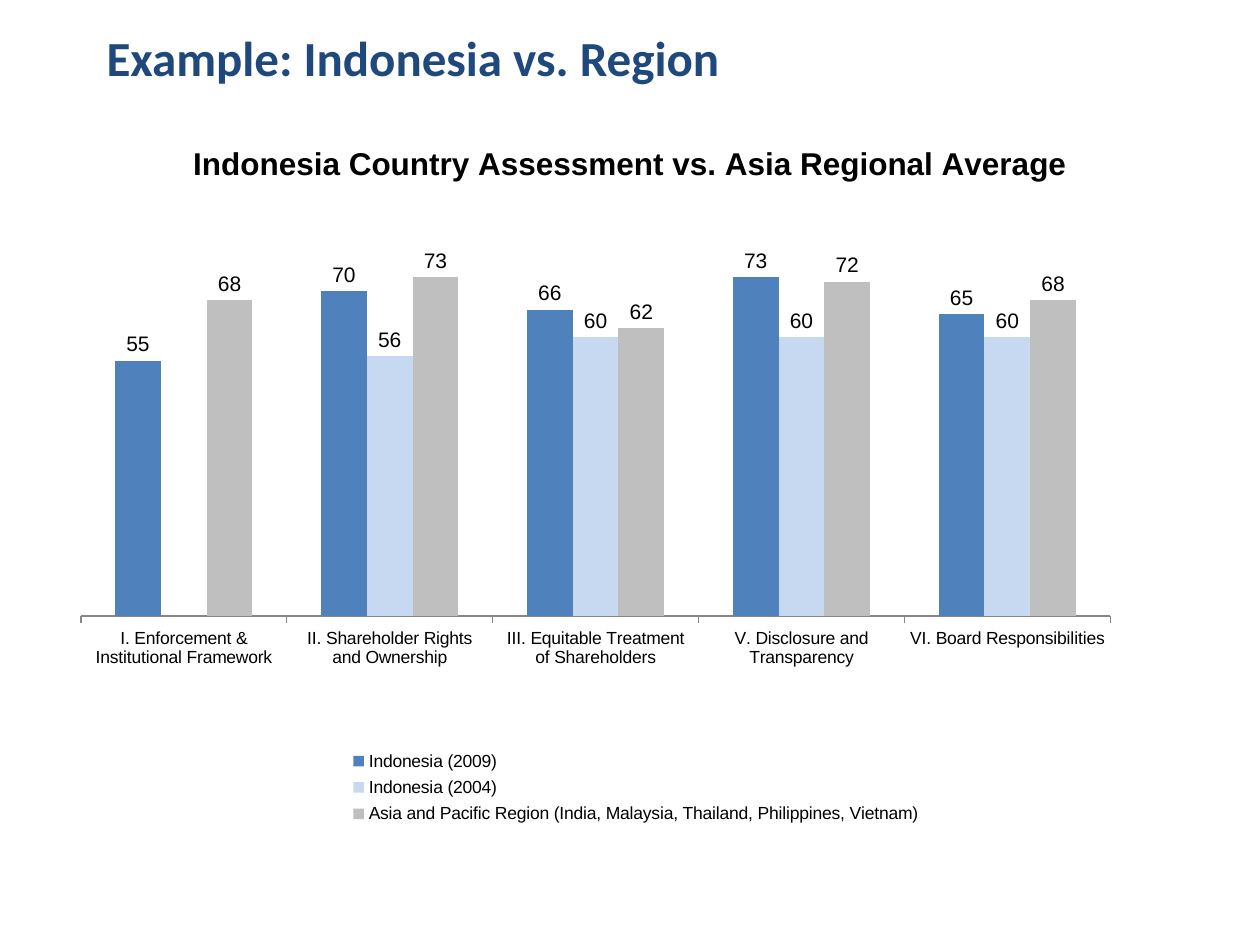
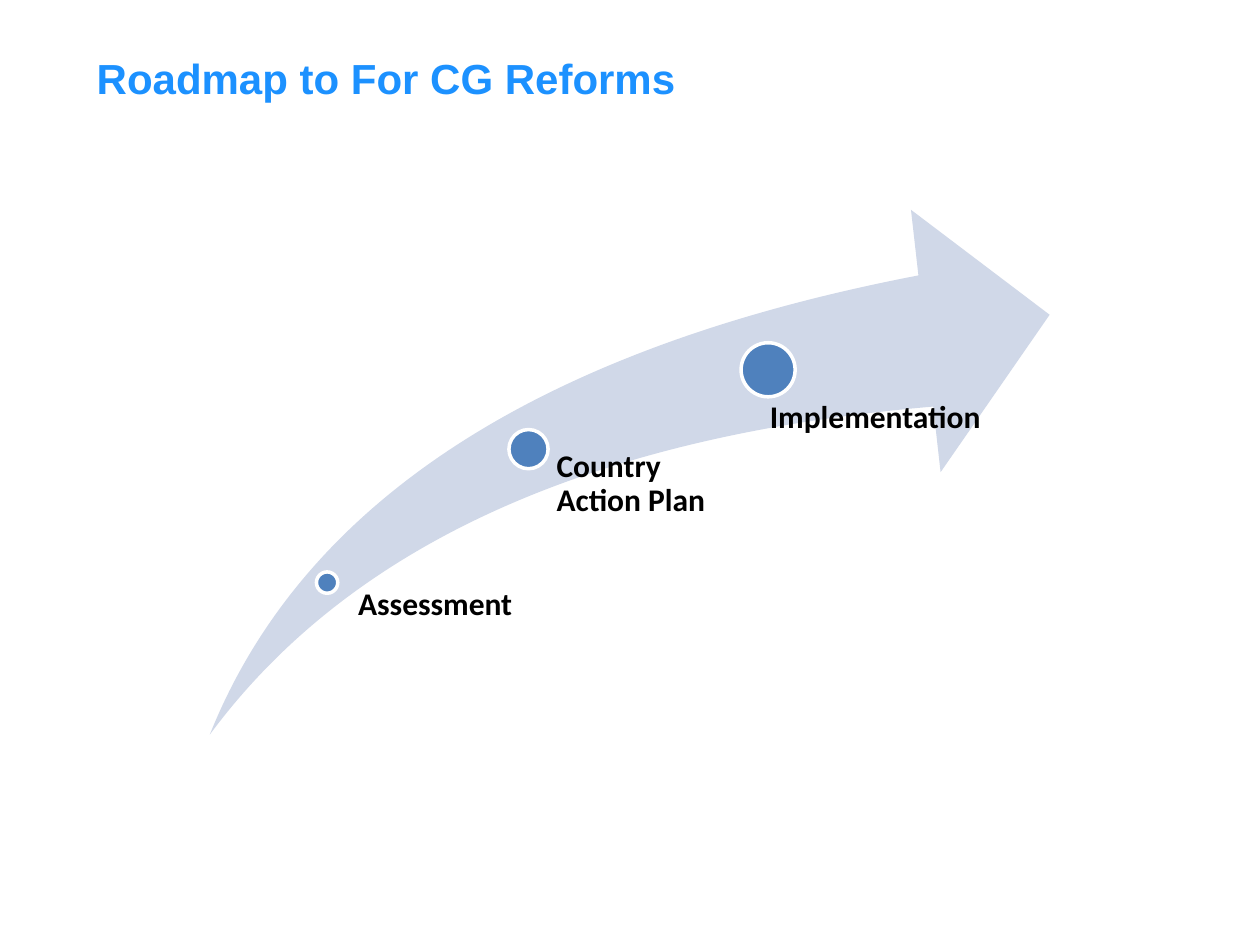
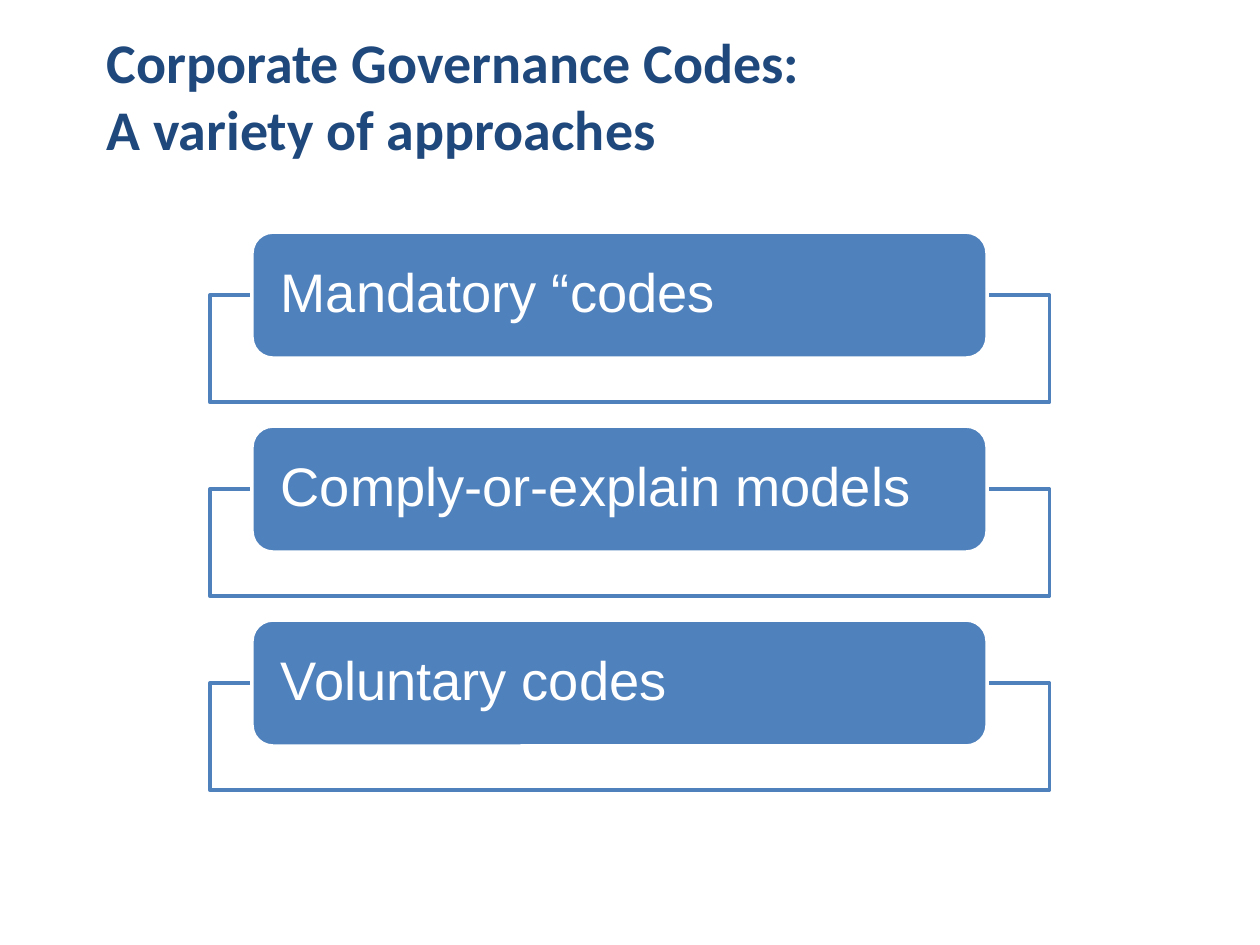
from lxml.etree import SubElement
from pptx import Presentation
from pptx.chart.data import CategoryChartData
from pptx.dml.color import RGBColor
from pptx.enum.chart import XL_CHART_TYPE, XL_LABEL_POSITION, XL_LEGEND_POSITION, XL_TICK_MARK
from pptx.enum.shapes import MSO_SHAPE
from pptx.enum.text import MSO_ANCHOR, PP_ALIGN
from pptx.oxml.ns import qn
from pptx.util import Cm, Pt

NAVY, SKY, BLUE = "1F497D", "1C91FF", "4F81BD"
PALE, SILVER, MIST = "C6D9F1", "BFBFBF", "D0D8E8"
WHITE, BLACK, GRAY = "FFFFFF", "000000", "868686"
TITLE = (1.9, 0.43, 21.6, 2.97)


def color(code):
    return RGBColor.from_string(code)


def put(slide, box, text="", size=18, font="Calibri", ink=BLACK, bold=True,
        kind=None, fill=None, line=None, inset=(0.25, 0.13), anchor=MSO_ANCHOR.TOP,
        space=1.0):
    """Add a text box, or a preset shape when kind is given."""
    spot = [Cm(v) for v in box]
    if kind is None:
        shape = slide.shapes.add_textbox(*spot)
    else:
        shape = slide.shapes.add_shape(kind, *spot)
        shape.shadow.inherit = False
        shape.fill.solid()
        shape.fill.fore_color.rgb = color(fill)
        if line:
            shape.line.color.rgb = color(line)
            shape.line.width = Pt(2)
        else:
            shape.line.fill.background()
    if text:
        frame = shape.text_frame
        frame.word_wrap = True
        frame.vertical_anchor = anchor
        frame.margin_left = frame.margin_right = Cm(inset[0])
        frame.margin_top = frame.margin_bottom = Cm(inset[1])
        para = frame.paragraphs[0]
        para.text = text
        para.alignment = PP_ALIGN.LEFT
        para.line_spacing = space
        para.font.size, para.font.name, para.font.bold = Pt(size), font, bold
        para.font.color.rgb = color(ink)
    return shape


deck = Presentation()
deck.slide_width, deck.slide_height = Cm(25.4), Cm(19.05)
blank = deck.slide_layouts[6]

# Slide 1: country scores against the region
slide = deck.slides.add_slide(blank)
put(slide, TITLE, "Example: Indonesia vs. Region", 28, ink=NAVY)

data = CategoryChartData()
data.categories = [
    "I. Enforcement & Institutional Framework",
    "II. Shareholder Rights and Ownership",
    "III. Equitable Treatment of Shareholders",
    "V. Disclosure and Transparency",
    "VI. Board Responsibilities",
]
scores = [
    ("Indonesia (2009)", (55, 70, 66, 73, 65), BLUE),
    ("Indonesia (2004)", (None, 56, 60, 60, 60), PALE),
    ("Asia and Pacific Region (India, Malaysia, Thailand, Philippines, Vietnam)",
     (68, 73, 62, 72, 68), SILVER),
]
for name, vals, tint in scores:
    data.add_series(name, vals)
chart = slide.shapes.add_chart(XL_CHART_TYPE.COLUMN_CLUSTERED, Cm(1.17), Cm(2.34),
                               Cm(23.06), Cm(14.4), data).chart
chart.font.size, chart.font.name = Pt(10), "Arial"
chart.font.color.rgb = color(BLACK)

# Chart title
chart.has_title = True
head = chart.chart_title.text_frame.paragraphs[0]
head.text = "Indonesia Country Assessment vs. Asia Regional Average"
head.font.size, head.font.name, head.font.bold = Pt(18), "Arial", True
head.font.color.rgb = color(BLACK)

# Axes
axis = chart.value_axis
axis.minimum_scale, axis.maximum_scale = 0, 80
axis.has_major_gridlines = False
axis.visible = False
chart.category_axis.major_tick_mark = XL_TICK_MARK.OUTSIDE
chart.category_axis.format.line.color.rgb = color(GRAY)

# Columns and their labels
plot = chart.plots[0]
plot.gap_width, plot.overlap, plot.vary_by_categories = 150, 0, False
for series, (name, vals, tint) in zip(plot.series, scores):
    series.format.fill.solid()
    series.format.fill.fore_color.rgb = color(tint)
    labels = series.data_labels
    labels.show_value = True
    labels.position = XL_LABEL_POSITION.OUTSIDE_END
    labels.number_format, labels.number_format_is_linked = "0", False
    labels.font.size, labels.font.name = Pt(12), "Arial"
    labels.font.color.rgb = color(BLACK)

# Legend and fixed places for the plot and the legend
chart.has_legend = True
chart.legend.position = XL_LEGEND_POSITION.BOTTOM
chart.legend.include_in_layout = False
area = chart._chartSpace.chart.plotArea
for old in area.findall(qn("c:layout")):
    area.remove(old)
legend = chart.legend._element
for part, slot, place in ((area, 0, (0.02, 0.18, 0.9, 0.52)),
                          (legend, 1, (0.25, 0.88, 0.51, 0.13))):
    layout = part.makeelement(qn("c:layout"))
    part.insert(slot, layout)
    manual = SubElement(layout, qn("c:manualLayout"))
    if part is area:
        SubElement(manual, qn("c:layoutTarget")).set("val", "inner")
    for key in ("xMode", "yMode"):
        SubElement(manual, qn("c:" + key)).set("val", "edge")
    for key, val in zip("xywh", place):
        SubElement(manual, qn("c:" + key)).set("val", str(val))

# Slide 2: roadmap along a rising arrow
slide = deck.slides.add_slide(blank)
put(slide, (1.7, 0.84, 21.16, 1.47), "Roadmap to For CG Reforms", 24, "Arial", SKY,
    anchor=MSO_ANCHOR.MIDDLE)
arrow = put(slide, (4.23, 4.23, 16.93, 10.58), kind=MSO_SHAPE.SWOOSH_ARROW, fill=MIST)
arrow.adjustments[0] = arrow.adjustments[1] = 0.25
steps = [
    ("Assessment", (6.38, 11.53, 0.43), (6.99, 11.86, 6.99, 3.05), 0.23),
    ("Country\vAction Plan", (10.26, 8.66, 0.79), (10.8, 9.07, 5.92, 5.77), 0.42),
    ("Implementation", (14.94, 6.91, 1.09), (14.94, 8.1, 5.59, 6.91), 0.58),
]
for text, (left, top, size), box, pad in steps:
    put(slide, (left, top, size, size), kind=MSO_SHAPE.OVAL, fill=BLUE, line=WHITE)
    label = put(slide, box, text, inset=(pad, 0), space=0.9)
    label.text_frame.margin_right = 0

# Slide 3: three kinds of code
slide = deck.slides.add_slide(blank)
put(slide, TITLE, "Corporate Governance Codes:\vA variety of approaches", 32, ink=NAVY)
for row, text in enumerate(("Mandatory “codes", "Comply-or-explain models",
                            "Voluntary codes")):
    top = 4.68 + row * 3.91
    put(slide, (4.23, top + 1.27, 16.93, 2.16), kind=MSO_SHAPE.RECTANGLE,
        fill=WHITE, line=BLUE)
    put(slide, (5.08, top, 14.82, 2.54), text, 31, "Arial", WHITE, False,
        MSO_SHAPE.ROUNDED_RECTANGLE, BLUE, WHITE, (0.46, 0), MSO_ANCHOR.MIDDLE, 0.9)

deck.save("out.pptx")
